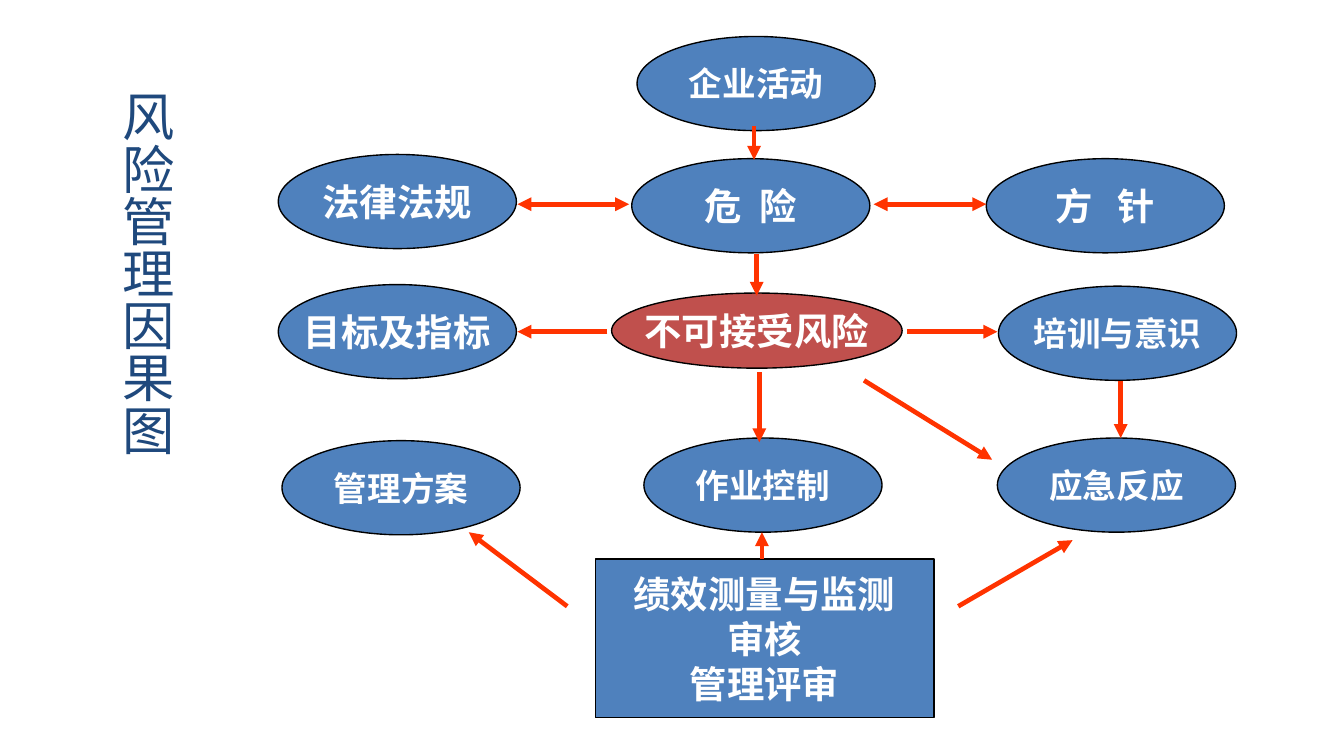
from dataclasses import dataclass

from lxml.etree import SubElement
from pptx import Presentation
from pptx.dml.color import RGBColor
from pptx.enum.shapes import MSO_CONNECTOR as Connector, MSO_SHAPE as Preset
from pptx.enum.text import MSO_ANCHOR as Anchor, PP_ALIGN as Align
from pptx.oxml.ns import qn
from pptx.slide import Slide
from pptx.text.text import TextFrame
from pptx.util import Cm, Pt

FONT = "Noto Sans CJK SC"
COLORS = {
    "blue": "4F81BD",
    "red": "C0504D",
    "arrow": "FF3300",
    "outline": "000000",
    "label": "FFFFFF",
    "title": "1F497D",
}
OVAL_WIDTH, OVAL_HEIGHT = 4.5, 1.78
OVAL_FRAME = {
    "margin_left": Cm(0.1),
    "margin_right": Cm(0.1),
    "margin_top": Cm(0.02),
    "margin_bottom": Cm(0.02),
}
NODE_FRAME = {"vertical_anchor": Anchor.MIDDLE, "word_wrap": False}


@dataclass(frozen=True)
class Node:
    text: str
    left: float
    top: float
    size: int = 18
    width: float = OVAL_WIDTH
    height: float = OVAL_HEIGHT
    fill: str = "blue"
    preset: Preset = Preset.OVAL
    spacing: float = 0


@dataclass(frozen=True)
class Arrow:
    start: tuple[float, float]
    end: tuple[float, float]
    double: bool = False


NODES = [
    Node("企业活动", 12.04, 0.69),
    Node("法律法规", 5.26, 2.92, 20),
    Node("危 险", 11.94, 3, 20, spacing=2.25),
    Node("方 针", 18.64, 3, 20, spacing=4.5),
    Node("目标及指标", 5.26, 5.38, 20),
    Node("不可接受风险", 11.56, 5.54, 20, 5.49, 1.42, "red"),
    Node("培训与意识", 18.87, 5.41),
    Node("管理方案", 5.33, 8.33),
    Node("作业控制", 12.17, 8.28),
    Node("应急反应", 18.85, 8.28),
    Node("绩效测量与监测\n审核\n管理评审", 11.25, 10.57, 20, 6.4, 3, preset=Preset.RECTANGLE),
]
ARROWS = [
    Arrow((9.78, 3.86), (11.89, 3.86), True),
    Arrow((16.51, 3.86), (18.64, 3.86), True),
    Arrow((11.48, 6.27), (9.78, 6.27)),
    Arrow((17.15, 6.27), (18.85, 6.27)),
    Arrow((16.33, 7.19), (18.75, 8.69)),
    Arrow((14.35, 7.04), (14.35, 8.36)),
    Arrow((10.72, 11.46), (8.86, 10.06)),
    Arrow((14.4, 10.57), (14.4, 10.06)),
    Arrow((18.11, 11.46), (20.27, 10.21)),
    Arrow((14.25, 2.39), (14.25, 3.02)),
    Arrow((21.18, 7.21), (21.18, 8.28)),
    Arrow((14.3, 4.8), (14.3, 5.59)),
]


def color(name: str) -> RGBColor:
    return RGBColor.from_string(COLORS[name])


def apply_format(target: object, values: dict) -> None:
    for name, value in values.items():
        setattr(target, name, value)


def write_text(frame: TextFrame, text: str, size: int, color_name: str,
               bold: bool, spacing: float = 0) -> None:
    frame.text = text
    for paragraph in frame.paragraphs:
        paragraph.alignment = Align.CENTER
        for run in paragraph.runs:
            apply_format(run.font, {"name": FONT, "size": Pt(size), "bold": bold})
            run.font.color.rgb = color(color_name)
            properties = run._r.get_or_add_rPr()
            SubElement(properties, qn("a:ea"), typeface=FONT)
            if spacing:
                properties.set("spc", str(round(spacing * 100)))


def draw_node(slide: Slide, node: Node) -> None:
    shape = slide.shapes.add_shape(
        node.preset, Cm(node.left), Cm(node.top), Cm(node.width), Cm(node.height))
    shape.shadow.inherit = False
    shape.fill.solid()
    shape.fill.fore_color.rgb = color(node.fill)
    shape.line.color.rgb = color("outline")
    shape.line.width = Pt(0.75)
    apply_format(shape.text_frame, NODE_FRAME)
    if node.preset == Preset.OVAL:
        apply_format(shape.text_frame, OVAL_FRAME)
    write_text(shape.text_frame, node.text, node.size, "label", True, node.spacing)


def draw_arrow(slide: Slide, arrow: Arrow) -> None:
    points = [Cm(value) for value in (*arrow.start, *arrow.end)]
    connector = slide.shapes.add_connector(Connector.STRAIGHT, *points)
    connector.line.color.rgb = color("arrow")
    connector.line.width = Pt(2.5)
    line = connector.line._get_or_add_ln()
    for tag in ("a:headEnd", "a:tailEnd") if arrow.double else ("a:tailEnd",):
        SubElement(line, qn(tag), type="triangle")
    SubElement(connector._element.spPr, qn("a:effectLst"))


def draw_title(slide: Slide) -> None:
    box = slide.shapes.add_textbox(Cm(1.8), Cm(1.47), Cm(1.7), Cm(9.96))
    box.text_frame.word_wrap = True
    box.text_frame._txBody.bodyPr.set("vert", "eaVert")
    write_text(box.text_frame, "风险管理因果图", 28, "title", False)


def main() -> None:
    presentation = Presentation()
    apply_format(presentation, {"slide_width": Cm(25.4), "slide_height": Cm(14.29)})
    slide = presentation.slides.add_slide(presentation.slide_layouts[6])
    for node in NODES:
        draw_node(slide, node)
    for arrow in ARROWS:
        draw_arrow(slide, arrow)
    draw_title(slide)
    presentation.save("out.pptx")


if __name__ == "__main__":
    main()
